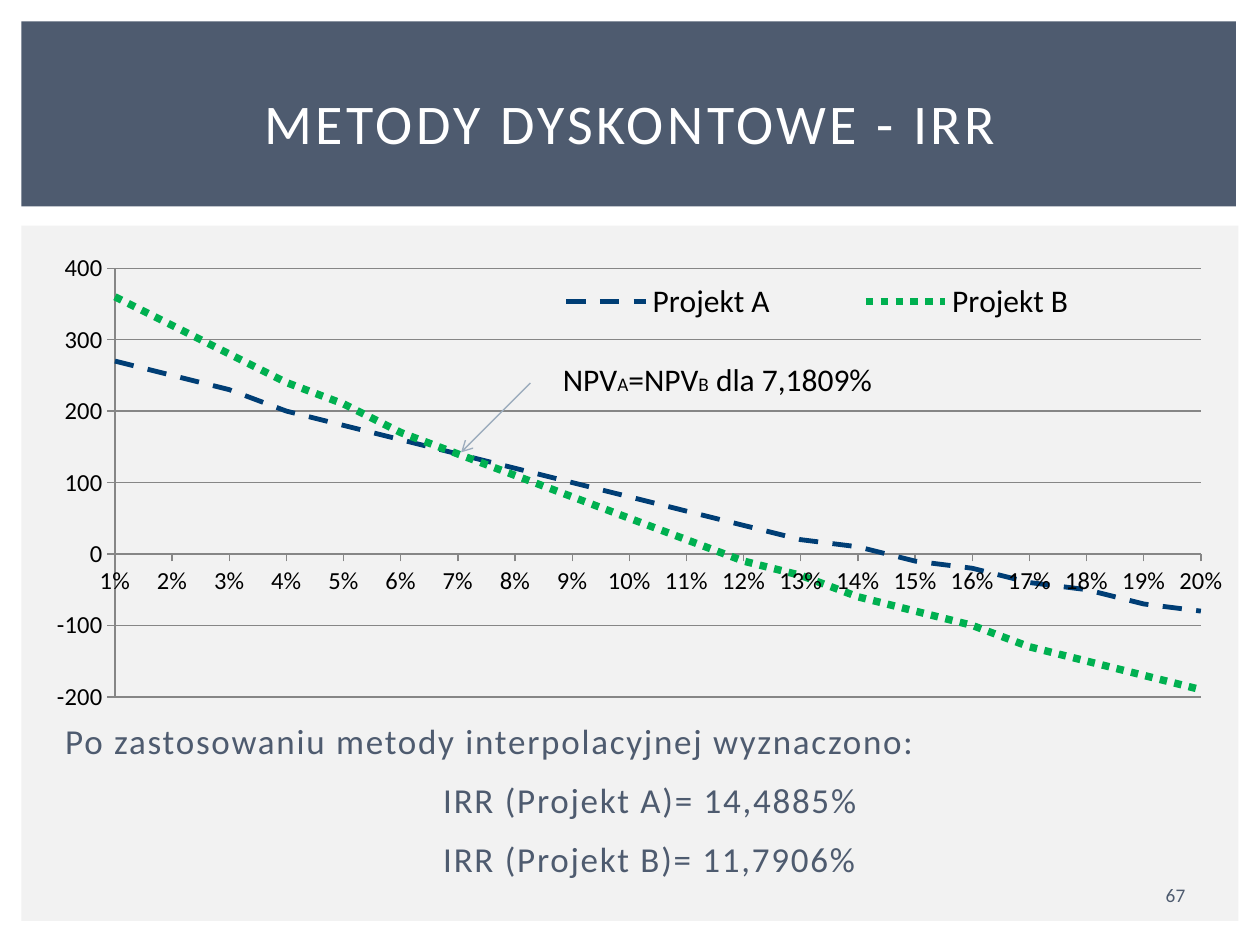
from dataclasses import dataclass
from lxml import etree
from pptx import Presentation
from pptx.chart import data as cd
from pptx.dml.color import RGBColor
from pptx.enum import chart as ch, dml, shapes, text
from pptx.oxml import ns
from pptx.util import Pt


@dataclass(frozen=True)
class Theme:
    face: str = "Calibri"
    slate: str = "4E5B6F"
    panel: str = "F2F2F2"
    white: str = "FFFFFF"
    black: str = "000000"
    grid: str = "868686"
    arrow: str = "9DADBE"
    navy: str = "003E75"
    green: str = "00B050"
    title: float = 32
    body: float = 20
    note: float = 18
    axis: float = 14
    small: float = 11


@dataclass(frozen=True)
class Box:
    left: float
    top: float
    width: float
    height: float

    def area(self) -> tuple:
        return Pt(self.left), Pt(self.top), Pt(self.width), Pt(self.height)


@dataclass(frozen=True)
class Series:
    name: str
    color: str
    width: float
    dash: dml.MSO_LINE
    vals: tuple


@dataclass(frozen=True)
class Line:
    words: str
    indent: float = 0


T = Theme()
BANDS = (
    (Box(12.2, 128.9, 695.5, 397.4), T.panel),
    (Box(12.2, 12.2, 694.1, 105.8), T.slate),
)
SERIES = (
    Series("Projekt A", T.navy, 2.75, dml.MSO_LINE.DASH,
           (270, 250, 230, 200, 180, 160, 140, 120, 100, 80,
            60, 40, 20, 10, -10, -20, -40, -50, -70, -80)),
    Series("Projekt B", T.green, 4.25, dml.MSO_LINE.ROUND_DOT,
           (360, 320, 280, 240, 210, 170, 140, 110, 80, 50,
            20, -10, -30, -60, -80, -100, -130, -150, -170, -190)),
)
LINES = (
    Line("Po zastosowaniu metody interpolacyjnej wyznaczono:"),
    Line("IRR (Projekt A)= 14,4885%", 216),
    Line("IRR (Projekt B)= 11,7906%", 216),
)
NOTE = (("NPV", T.note), ("A", T.small), ("=NPV", T.note),
        ("B", T.small), (" dla 7,1809%", T.note))


def rgb(code: str) -> RGBColor:
    return RGBColor.from_string(code)


def style(font, size: float, color: str, gap: float = 0) -> None:
    font.name, font.size = T.face, Pt(size)
    font.color.rgb = rgb(color)
    if gap:
        font._rPr.set("spc", str(int(gap * 100)))


def band(slide, box: Box, color: str) -> None:
    shape = slide.shapes.add_shape(shapes.MSO_SHAPE.RECTANGLE, *box.area())
    shape.shadow.inherit = False
    shape.fill.solid()
    shape.fill.fore_color.rgb = rgb(color)
    shape.line.fill.background()


def frame(slide, box: Box, middle: bool = False):
    body = slide.shapes.add_textbox(*box.area()).text_frame
    body.word_wrap = True
    if middle:
        body.vertical_anchor = text.MSO_ANCHOR.MIDDLE
    return body


def label(slide, box: Box, words: str, size: float, color: str,
          gap: float = 0) -> None:
    para = frame(slide, box, True).paragraphs[0]
    para.text = words
    para.alignment = text.PP_ALIGN.CENTER
    style(para.font, size, color, gap)


def prose(slide, box: Box, lines: tuple) -> None:
    body = frame(slide, box)
    body.margin_top = body.margin_bottom = 0
    for num, line in enumerate(lines):
        para = body.add_paragraph() if num else body.paragraphs[0]
        para.text = line.words
        para.line_spacing = Pt(33.6)
        para._p.get_or_add_pPr().set("marL", str(Pt(line.indent)))
        style(para.font, T.body, T.slate, 1)


def note(slide, box: Box, parts: tuple) -> None:
    para = frame(slide, box).paragraphs[0]
    style(para.font, T.note, T.black)
    for words, size in parts:
        run = para.add_run()
        run.text = words
        run.font.size = Pt(size)


def place(owner, rect: tuple, inner: bool = False) -> None:
    old = owner.find(ns.qn("c:layout"))
    if old is not None:
        owner.remove(old)
    layout = etree.Element(ns.qn("c:layout"))
    manual = etree.SubElement(layout, ns.qn("c:manualLayout"))
    pairs = [("layoutTarget", "inner")] if inner else []
    pairs += [("xMode", "edge"), ("yMode", "edge")]
    pairs += zip("xywh", map(str, rect))
    for tag, val in pairs:
        etree.SubElement(manual, ns.qn("c:" + tag)).set("val", val)
    owner.insert(0 if inner else 1, layout)


def pen(line, color: str, width: float) -> None:
    line.color.rgb = rgb(color)
    line.width = Pt(width)


def graph(slide, box: Box, series: tuple) -> None:
    data = cd.CategoryChartData()
    data.categories = [n / 100 for n in range(1, 21)]
    data.categories.number_format = "0%"
    for item in series:
        data.add_series(item.name, item.vals)
    chart = slide.shapes.add_chart(
        ch.XL_CHART_TYPE.LINE, *box.area(), data).chart
    chart.has_title = False
    style(chart.font, 10, T.black)
    plot = chart.plots[0]
    plot.vary_by_categories = False
    for item, trace in zip(series, plot.series):
        trace.smooth = False
        trace.marker.style = ch.XL_MARKER_STYLE.NONE
        pen(trace.format.line, item.color, item.width)
        trace.format.line.dash_style = item.dash
    cat, val = chart.category_axis, chart.value_axis
    for axis, form in ((cat, "0%"), (val, "#,##0")):
        axis.major_tick_mark = ch.XL_TICK_MARK.OUTSIDE
        axis.minor_tick_mark = ch.XL_TICK_MARK.NONE
        style(axis.tick_labels.font, T.axis, T.black)
        axis.tick_labels.number_format = form
        axis.tick_labels.number_format_is_linked = False
        pen(axis.format.line, T.grid, 0.75)
    val.minimum_scale, val.maximum_scale, val.major_unit = -200, 400, 100
    val.has_major_gridlines = True
    pen(val.major_gridlines.format.line, T.grid, 0.75)
    cross = val._element.find(ns.qn("c:crossBetween"))
    if cross is None:
        cross = etree.Element(ns.qn("c:crossBetween"))
        val._element.find(ns.qn("c:majorUnit")).addprevious(cross)
    cross.set("val", "midCat")
    chart.has_legend = True
    key = chart.legend
    key.position = ch.XL_LEGEND_POSITION.RIGHT
    key.include_in_layout = False
    style(key.font, T.note, T.black)
    place(key._element, (0.37, 0.07, 0.57, 0.1))
    place(chart._chartSpace.chart.plotArea, (0.06, 0.05, 0.92, 0.9), True)


def arrow(slide, start: tuple, end: tuple) -> None:
    link = slide.shapes.add_connector(
        shapes.MSO_CONNECTOR.STRAIGHT, *map(Pt, start + end))
    pen(link.line, T.arrow, 0.79)
    tip = etree.SubElement(link.line._get_or_add_ln(), ns.qn("a:tailEnd"))
    tip.set("type", "arrow")
    etree.SubElement(link._element.spPr, ns.qn("a:effectLst"))


def main() -> None:
    deck = Presentation()
    deck.slide_width, deck.slide_height = Pt(720), Pt(540)
    slide = deck.slides.add_slide(deck.slide_layouts[6])
    for box, color in BANDS:
        band(slide, box, color)
    prose(slide, Box(30.2, 401.8, 661.7, 110), LINES)
    label(slide, Box(648.7, 500.4, 46.1, 21.6), "67", T.small, T.slate)
    label(slide, Box(30.2, 28.1, 660.2, 82.8),
          "METODY DYSKONTOWE - IRR", T.title, T.white, 2)
    graph(slide, Box(25.2, 139.7, 674.6, 272.2), SERIES)
    arrow(slide, (303.1, 218.9), (263.5, 258.5))
    note(slide, Box(314.6, 202.3, 317.5, 28.8), NOTE)
    deck.save("out.pptx")


if __name__ == "__main__":
    main()
